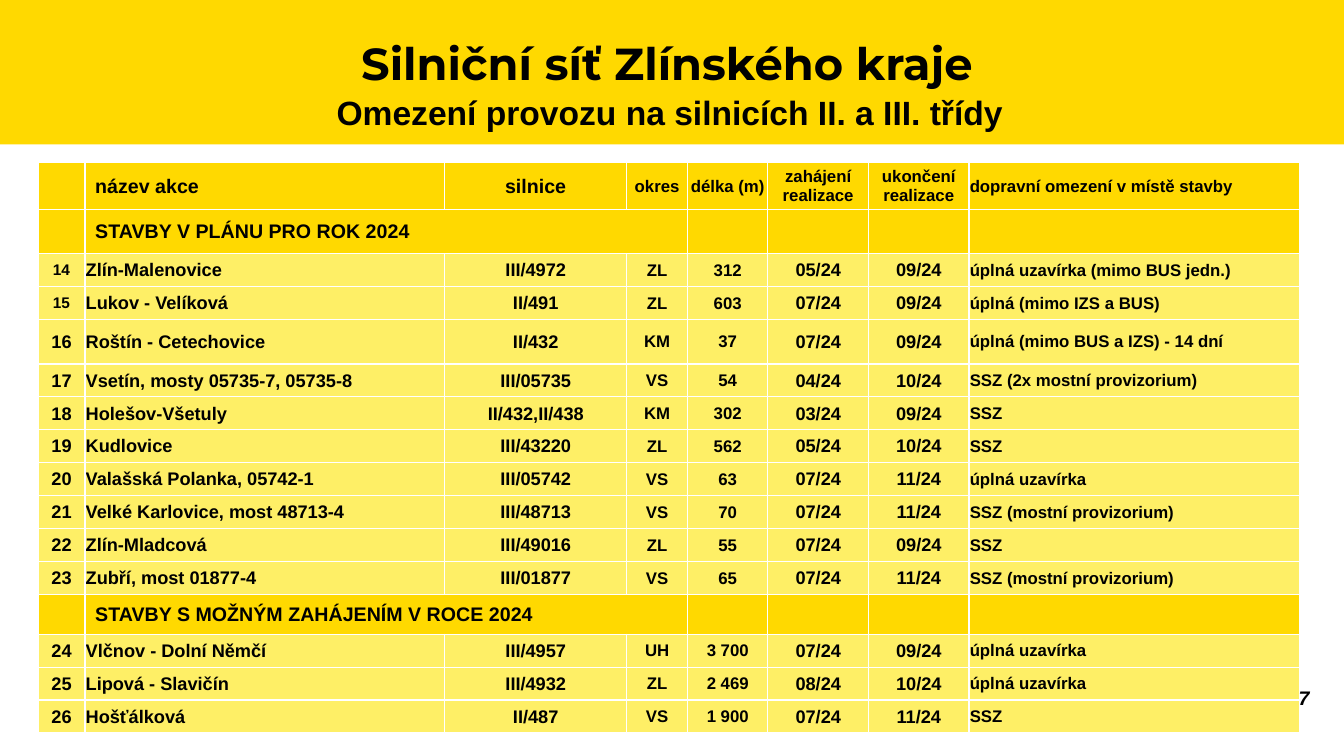
from typing import NamedTuple

from lxml import etree
from pptx import Presentation
from pptx import util as u
from pptx.dml.color import RGBColor
from pptx.enum import shapes, text
from pptx.oxml.ns import qn

GOLD, PALE, BLACK, WHITE = "FFD900", "FEEF66", "000000", "FFFFFF"
LEFT, CENTER, RIGHT = text.PP_ALIGN.LEFT, text.PP_ALIGN.CENTER, text.PP_ALIGN.RIGHT
TOP, MIDDLE, BOTTOM = text.MSO_ANCHOR.TOP, text.MSO_ANCHOR.MIDDLE, text.MSO_ANCHOR.BOTTOM


class Column(NamedTuple):
    heading: str
    width: float
    align: text.PP_ALIGN
    heading_size: int
    size: int


class Row(NamedTuple):
    cells: tuple[str, ...]
    height: float = 0.83
    number_size: int = 13


class Section(NamedTuple):
    title: str
    height: float
    rows: list[Row]


class Label(NamedTuple):
    content: str
    left: float
    top: float
    width: float
    height: float
    size: int
    font: str = "Arial"
    align: text.PP_ALIGN = CENTER
    anchor: text.MSO_ANCHOR = TOP
    spacing: float = 0.9
    italic: bool = False


COLUMNS = [
    Column("", 1.18, CENTER, 14, 13),
    Column("název akce", 9.07, LEFT, 14, 13),
    Column("silnice", 4.58, CENTER, 14, 13),
    Column("okres", 1.54, CENTER, 12, 12),
    Column("délka (m)", 2.02, CENTER, 12, 12),
    Column("zahájení realizace", 2.54, CENTER, 12, 13),
    Column("ukončení realizace", 2.53, CENTER, 12, 13),
    Column("dopravní omezení v místě stavby", 8.32, LEFT, 12, 12),
]

SECTIONS = [
    Section("STAVBY V PLÁNU PRO ROK 2024", 1.12, [
        Row(("14", "Zlín-Malenovice", "III/4972", "ZL", "312", "05/24", "09/24",
             "úplná uzavírka (mimo BUS jedn.)"), number_size=11),
        Row(("15", "Lukov - Velíková", "II/491", "ZL", "603", "07/24", "09/24",
             "úplná (mimo IZS a BUS)"), number_size=11),
        Row(("16", "Roštín - Cetechovice", "II/432", "KM", "37", "07/24", "09/24",
             "úplná (mimo BUS a IZS) - 14 dní"), height=1.12),
        Row(("17", "Vsetín, mosty 05735-7, 05735-8", "III/05735", "VS", "54", "04/24", "10/24",
             "SSZ (2x mostní provizorium)")),
        Row(("18", "Holešov-Všetuly", "II/432,II/438", "KM", "302", "03/24", "09/24", "SSZ")),
        Row(("19", "Kudlovice", "III/43220", "ZL", "562", "05/24", "10/24", "SSZ")),
        Row(("20", "Valašská Polanka, 05742-1", "III/05742", "VS", "63", "07/24", "11/24",
             "úplná uzavírka")),
        Row(("21", "Velké Karlovice, most 48713-4", "III/48713", "VS", "70", "07/24", "11/24",
             "SSZ (mostní provizorium)")),
        Row(("22", "Zlín-Mladcová", "III/49016", "ZL", "55", "07/24", "09/24", "SSZ")),
        Row(("23", "Zubří, most 01877-4", "III/01877", "VS", "65", "07/24", "11/24",
             "SSZ (mostní provizorium)")),
    ]),
    Section("STAVBY S MOŽNÝM ZAHÁJENÍM V ROCE 2024", 1.0, [
        Row(("24", "Vlčnov - Dolní Němčí", "III/4957", "UH", "3 700", "07/24", "09/24",
             "úplná uzavírka")),
        Row(("25", "Lipová - Slavičín", "III/4932", "ZL", "2 469", "08/24", "10/24",
             "úplná uzavírka")),
        Row(("26", "Hošťálková", "II/487", "VS", "1 900", "07/24", "11/24", "SSZ")),
    ]),
]

LABELS = [
    Label("7", 31.88, 17.15, 1.37, 0.84, 14, align=RIGHT, anchor=BOTTOM, spacing=1.0, italic=True),
    Label("Silniční síť Zlínského kraje", 1.17, 0.94, 31.29, 1.6, 32, font="Montserrat"),
    Label("Omezení provozu na silnicích II. a III. třídy", 1.02, 2.31, 31.72, 1.5, 24),
]


def color(hex_code: str) -> RGBColor:
    return RGBColor.from_string(hex_code)


def add_run(p, content: str, size: int, font: str = "Arial", italic: bool = False) -> None:
    r = p.add_run()
    r.text = content
    r.font.name, r.font.size = font, u.Pt(size)
    r.font.bold, r.font.italic = True, italic
    r.font.color.rgb = color(BLACK)


def add_band(slide) -> None:
    sp = slide.shapes.add_shape(shapes.MSO_SHAPE.RECTANGLE, 0, 0, u.Cm(33.87), u.Cm(3.64))
    sp.shadow.inherit = False
    sp.fill.solid()
    sp.fill.fore_color.rgb = color(GOLD)
    sp.line.fill.background()


def add_label(slide, label: Label) -> None:
    box = [u.Cm(n) for n in (label.left, label.top, label.width, label.height)]
    tf = slide.shapes.add_textbox(*box).text_frame
    tf.word_wrap = True
    tf.vertical_anchor = label.anchor
    p = tf.paragraphs[0]
    p.alignment, p.line_spacing = label.align, label.spacing
    add_run(p, label.content, label.size, label.font, label.italic)


def style_cell(cell, fill: str) -> None:
    tc_pr = cell._tc.get_or_add_tcPr()
    for side in ("a:lnL", "a:lnR", "a:lnT", "a:lnB"):
        ln = etree.SubElement(tc_pr, qn(side), w=str(u.Pt(1)))
        solid = etree.SubElement(ln, qn("a:solidFill"))
        etree.SubElement(solid, qn("a:srgbClr"), val=WHITE)
    cell.fill.solid()
    cell.fill.fore_color.rgb = color(fill)
    cell.vertical_anchor = MIDDLE
    cell.margin_left = cell.margin_right = cell.margin_top = u.Cm(0.02)
    cell.margin_bottom = 0


def write_cell(cell, content: str, size: int, align: text.PP_ALIGN, indent: float = 0) -> None:
    if not content:
        return
    p = cell.text_frame.paragraphs[0]
    p.alignment = align
    if indent:
        p._p.get_or_add_pPr().set("marL", str(u.Cm(indent)))
    add_run(p, content, size)


def start_row(table, index: int, height: float, fill: str) -> list:
    """Set the height and fill of one row and return its cells."""
    table.rows[index].height = u.Cm(height)
    cells = list(table.rows[index].cells)
    for cell in cells:
        style_cell(cell, fill)
    return cells


def add_closures_table(slide) -> None:
    row_count = 1 + sum(1 + len(section.rows) for section in SECTIONS)
    width = sum(column.width for column in COLUMNS)
    table = slide.shapes.add_table(row_count, len(COLUMNS), u.Cm(0.96), u.Cm(4.1),
                                   u.Cm(width), u.Cm(14.4)).table
    table.first_row = table.horz_banding = False
    for table_column, column in zip(table.columns, COLUMNS):
        table_column.width = u.Cm(column.width)

    for i, (cell, column) in enumerate(zip(start_row(table, 0, 1.17, GOLD), COLUMNS)):
        write_cell(cell, column.heading, column.heading_size, column.align, 0.24 if i == 1 else 0)

    index = 1
    for section in SECTIONS:
        cells = start_row(table, index, section.height, GOLD)
        cells[1].merge(cells[3])
        write_cell(cells[1], section.title, 14, LEFT, 0.24)
        for index, row in enumerate(section.rows, index + 1):
            cells = start_row(table, index, row.height, PALE)
            for i, (cell, content, column) in enumerate(zip(cells, row.cells, COLUMNS)):
                write_cell(cell, content, column.size if i else row.number_size, column.align)
        index += 1


def main() -> None:
    prs = Presentation()
    prs.slide_width, prs.slide_height = u.Cm(33.87), u.Cm(19.05)
    slide = prs.slides.add_slide(prs.slide_layouts[6])
    add_band(slide)
    add_closures_table(slide)
    for label in LABELS:
        add_label(slide, label)
    prs.save("out.pptx")


if __name__ == "__main__":
    main()
